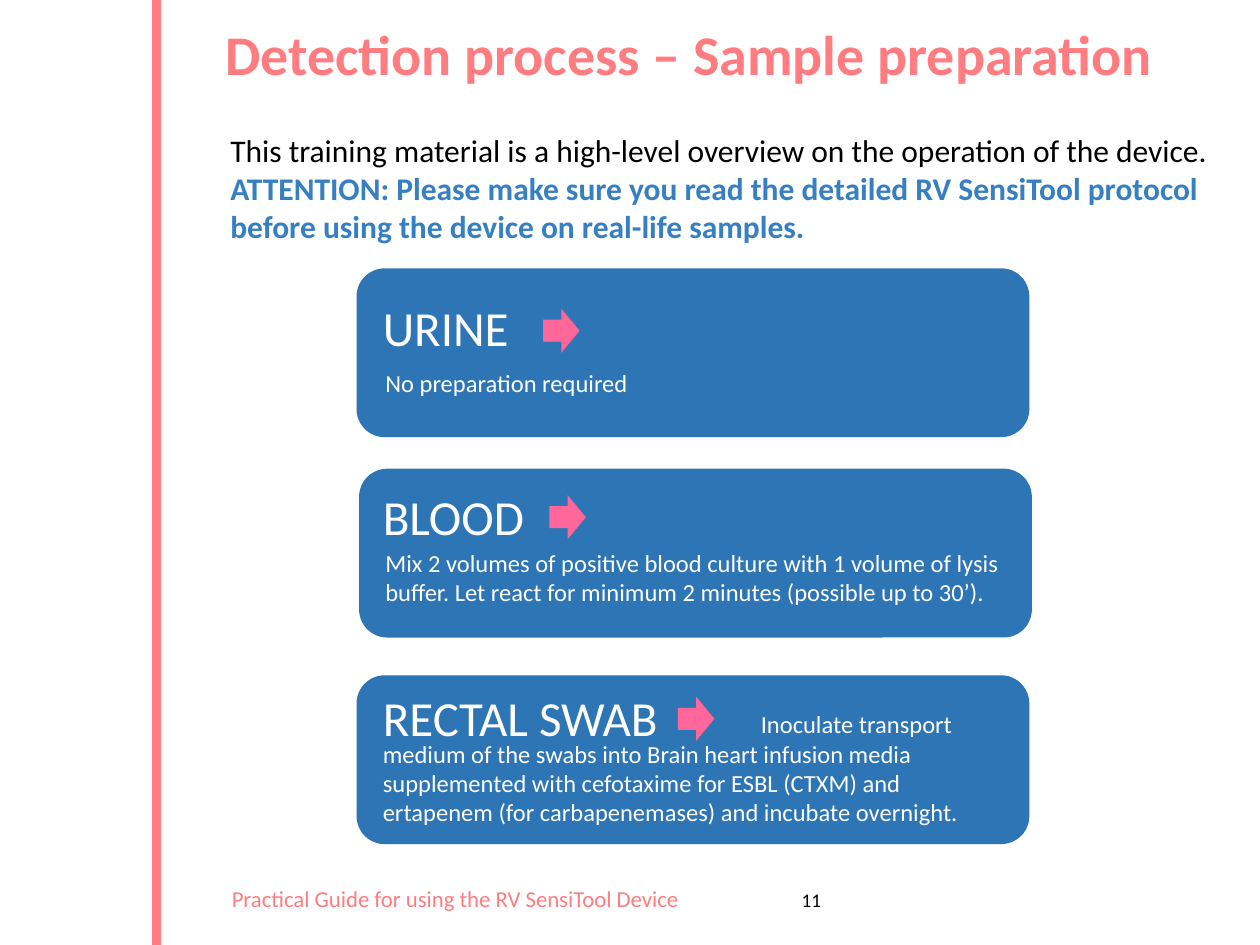
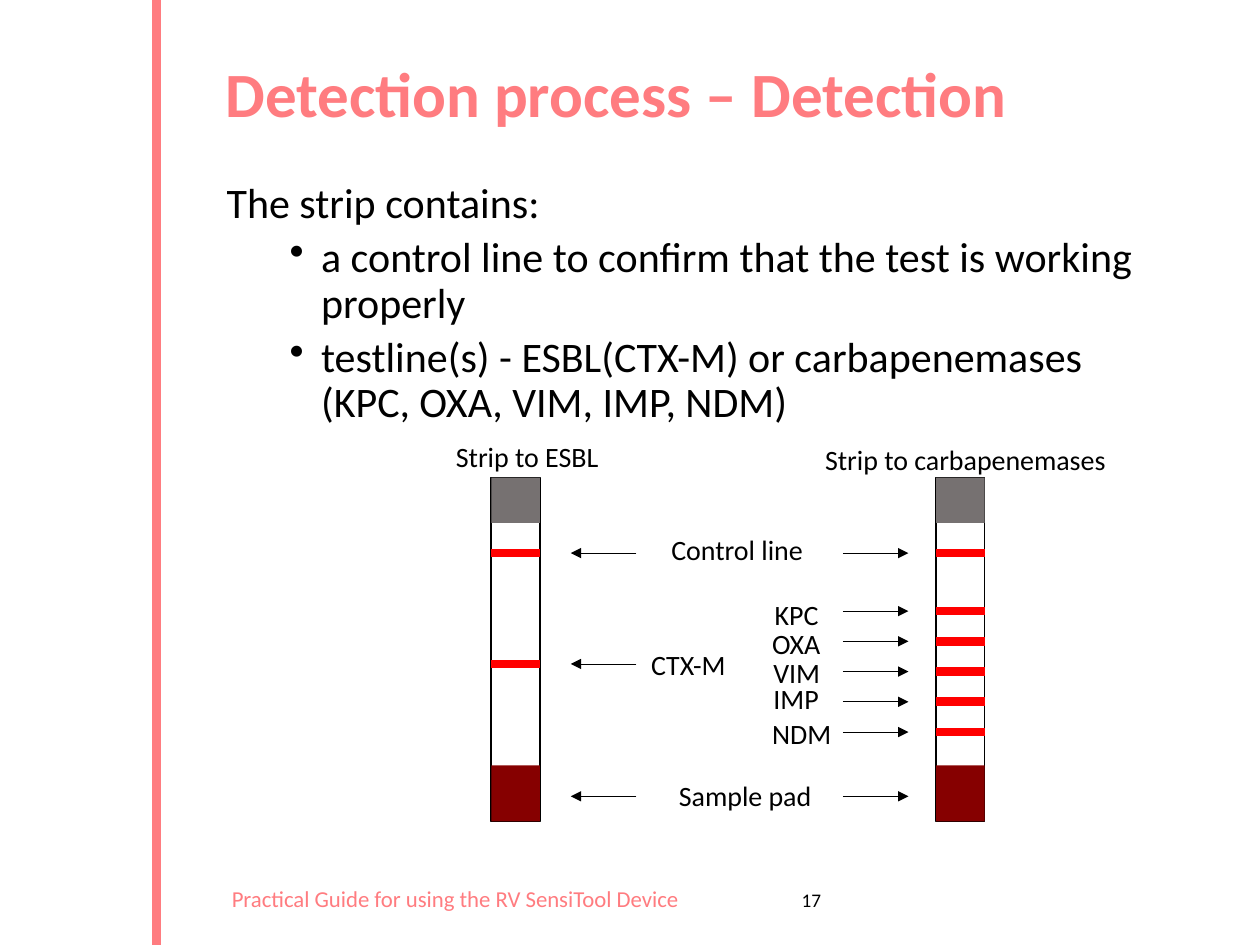
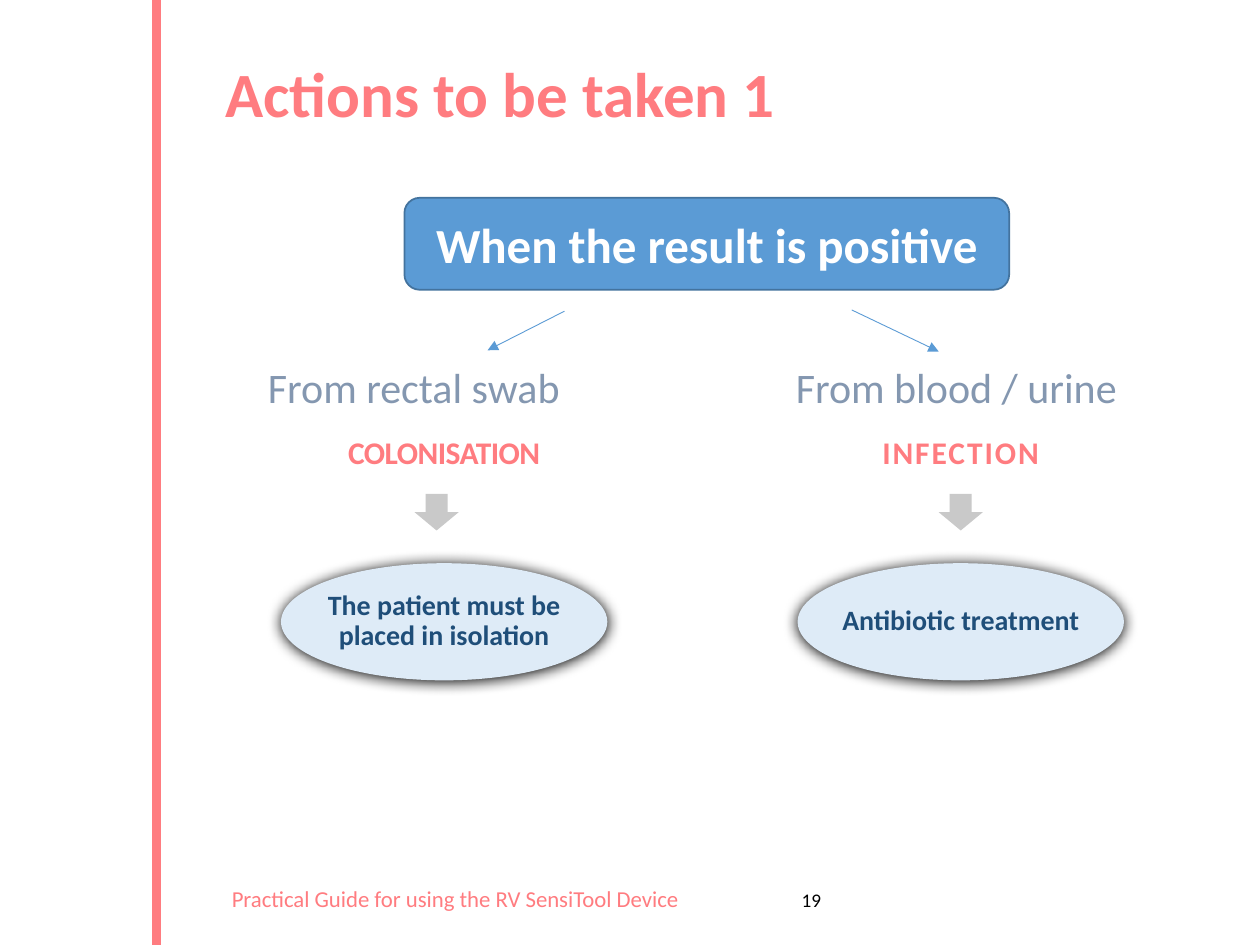
from lxml import etree
from pptx import Presentation
from pptx.dml.color import RGBColor
from pptx.enum.shapes import MSO_CONNECTOR, MSO_SHAPE
from pptx.enum.text import MSO_ANCHOR, PP_ALIGN
from pptx.oxml.ns import qn
from pptx.util import Inches, Pt

ROUNDED, RECT, OVAL = MSO_SHAPE.ROUNDED_RECTANGLE, MSO_SHAPE.RECTANGLE, MSO_SHAPE.OVAL
RIGHT_ARROW, DOWN_ARROW = MSO_SHAPE.RIGHT_ARROW, MSO_SHAPE.DOWN_ARROW
LEFT, CENTER = PP_ALIGN.LEFT, PP_ALIGN.CENTER
TOP, MIDDLE = MSO_ANCHOR.TOP, MSO_ANCHOR.MIDDLE
STRAIGHT = MSO_CONNECTOR.STRAIGHT

# Grid of the slide
COLUMNS, ROWS = 100, 75

# Shared style
FONT = "Calibri"
CORAL, PINK, RED, MAROON = "FF7C80", "FF6699", "FF0000", "860000"
BLACK, WHITE, GREY, SILVER = "000000", "FFFFFF", "767171", "C9C9C9"
CARD_BLUE, NOTE_BLUE, BOX_BLUE, BOX_EDGE = "2E75B6", "357FC2", "5B9BD5", "43739E"
SLATE, PALE_BLUE, NAVY = "8497B0", "DEEBF7", "1F4E79"
FOOTER = "Practical Guide for using the RV SensiTool Device"


def rgb(code):
    return RGBColor.from_string(code)


class SlideWriter:
    """Holds the deck, its style and the slide being filled."""

    def __init__(self):
        self.deck = Presentation()
        self.deck.slide_width, self.deck.slide_height = Inches(10), Inches(7.5)
        self.page = None

    def x(self, columns):
        return round(self.deck.slide_width * columns / COLUMNS)

    def y(self, rows):
        return round(self.deck.slide_height * rows / ROWS)

    def area(self, left, top, width, height):
        return self.x(left), self.y(top), self.x(width), self.y(height)

    def start(self, title, number, top=4.5, size=36):
        """Adds a slide with side band, title, footer and page number."""
        self.page = self.deck.slides.add_slide(self.deck.slide_layouts[6])
        self.line(12.4, ROWS, 12.4, 0, CORAL, 5)
        self.text((16.1, 69.7, 40, 3.2), FOOTER, 13, CORAL, align=CENTER)
        self.text((16.9, top, 81, 8), title, size, CORAL, bold=True, spacing=0.9)
        self.text((62.2, 70, 4.4, 2.9), str(number), 11, align=CENTER)

    def paragraph(self, para, words, size, color=BLACK, bold=False, align=LEFT,
                  spacing=None, before=None, bullet=False, indent=0):
        para.alignment = align
        if spacing:
            para.line_spacing = spacing
        if before:
            para.space_before = Pt(before)
        props = para._p.get_or_add_pPr()
        if bullet:
            props.set("marL", str(Inches(0.75)))
            props.set("indent", str(Inches(-0.25)))
            etree.SubElement(props, qn("a:buChar"), char="•")
        elif indent:
            props.set("indent", str(self.x(indent)))
        font = para.font
        font.name, font.size, font.bold = FONT, Pt(size), bold
        font.color.rgb = rgb(color)
        para.add_run().text = words
        return para

    def text(self, area, words, size, color=BLACK, anchor=TOP, **style):
        box = self.page.shapes.add_textbox(*self.area(*area))
        frame = box.text_frame
        frame.word_wrap = True
        frame.vertical_anchor = anchor
        return self.paragraph(frame.paragraphs[0], words, size, color, **style)

    def shape(self, kind, area, fill, edge=None):
        shape = self.page.shapes.add_shape(kind, *self.area(*area))
        shape.shadow.inherit = False
        shape.fill.solid()
        shape.fill.fore_color.rgb = rgb(fill)
        if edge:
            shape.line.color.rgb = rgb(edge)
            shape.line.width = Pt(1)
        else:
            shape.line.fill.background()
        return shape

    def soft_shadow(self, shape):
        effects = shape._element.spPr.find(qn("a:effectLst"))
        shadow = etree.SubElement(
            effects, qn("a:outerShdw"), blurRad=str(Pt(8.5)), dist=str(Pt(1)),
            dir="5400000", algn="ctr", rotWithShape="0")
        etree.SubElement(shadow, qn("a:srgbClr"), val=BLACK)

    def line(self, x1, y1, x2, y2, color, width, arrow=False):
        line = self.page.shapes.add_connector(
            STRAIGHT, self.x(x1), self.y(y1), self.x(x2), self.y(y2))
        line.line.color.rgb = rgb(color)
        line.line.width = Pt(width)
        props = line._element.spPr
        if arrow:
            etree.SubElement(props.find(qn("a:ln")), qn("a:tailEnd"), type="triangle")
        etree.SubElement(props, qn("a:effectLst"))

    def arrow(self, x1, y1, x2, y2, color=BLACK):
        self.line(x1, y1, x2, y2, color, 0.5, arrow=True)

    def strip(self, left, line_rows):
        """Test strip with grey top, sample pad and red lines."""
        width = 3.85
        self.shape(RECT, (left, 37.9, width, 27.3), WHITE, BLACK)
        self.shape(RECT, (left, 37.9, width, 3.6), GREY)
        self.shape(RECT, (left, 60.75, width, 4.45), MAROON)
        for row in line_rows:
            self.line(left, row, left + width, row, RED, 5)


def sample_preparation(writer):
    writer.start("Detection process – Sample preparation", 11, top=1.7, size=32)
    intro = writer.text(
        (17.3, 9.9, 80.6, 10.1),
        "This training material is a high-level overview on the operation of the device. ", 18)
    warning = intro.add_run()
    warning.text = ("ATTENTION: Please make sure you read the detailed RV SensiTool "
                    "protocol before using the device on real-life samples.")
    warning.font.bold = True
    warning.font.color.rgb = rgb(NOTE_BLUE)

    # One card per sample: card corner, name top, arrow corner, advice area, first indent
    samples = [
        ("URINE", (28.3, 21.3), 23.1, (43.1, 24.5), (29.6, 28.7, 47.8, 3.4), 0,
         "No preparation required"),
        ("BLOOD", (28.5, 37.2), 38.1, (43.6, 39.3), (29.6, 43, 52.1, 5.7), 0,
         "Mix 2 volumes of positive blood culture with 1 volume of lysis buffer. "
         "Let react for minimum 2 minutes (possible up to 30’)."),
        ("RECTAL SWAB", (28.3, 53.6), 54.1, (53.8, 55.3), (29.4, 55.8, 50.6, 10.4), 30,
         "Inoculate transport medium of the swabs into Brain heart infusion media "
         "supplemented with cefotaxime for ESBL (CTXM) and ertapenem "
         "(for carbapenemases) and incubate overnight."),
    ]
    for name, card, name_top, arrow, advice_area, indent, advice in samples:
        writer.shape(ROUNDED, (*card, 53.4, 13.4), CARD_BLUE)
        writer.text((29.4, name_top, 24.9, 5.7), name, 28, WHITE)
        writer.shape(RIGHT_ARROW, (*arrow, 2.9, 3.5), PINK)
        writer.text(advice_area, advice, 14, WHITE, indent=indent)


def detection(writer):
    writer.start("Detection process – Detection", 17)
    first = writer.text((17, 14, 76.2, 22), "The strip contains:", 24, spacing=0.9)
    for words in ("a control line to confirm that the test is working properly",
                  "testline(s) - ESBL(CTX-M) or carbapenemases (KPC, OXA, VIM, IMP, NDM)"):
        # The paragraph's parent gives access to the same text box
        para = writer.page.shapes[-1].text_frame.add_paragraph()
        writer.paragraph(para, words, 24, spacing=0.9, before=5, bullet=True)
    first.space_after = Pt(0)

    # Strips
    control, pad, ctx_m = 43.9, 63.2, 52.7
    enzyme_rows = [48.5 + 2.4 * index for index in range(5)]
    writer.strip(39, [control, ctx_m])
    writer.strip(74.3, [control, *enzyme_rows])

    # Labels
    labels = [
        ("Strip to ESBL", 35.2, 34.4), ("Strip to carbapenemases", 64.5, 34.6),
        ("Control line", 52.3, 41.8), ("Sample pad", 52.9, 61.3), ("CTX-M", 50.7, 50.9),
        ("KPC", 60.5, 46.9), ("OXA", 60.3, 49.2), ("VIM", 60.4, 51.5),
        ("IMP", 60.4, 53.6), ("NDM", 60.3, 56.4),
    ]
    for words, left, top in labels:
        writer.text((left, top, 5 + 1.1 * len(words), 3.7), words, 16)

    # Arrows to the strips
    for row in (control, ctx_m, pad):
        writer.arrow(50.5, row, 45.3, row)
    for row in (control, *enzyme_rows, pad):
        writer.arrow(66.9, row, 72.1, row)


def actions(writer):
    writer.start("Actions to be taken 1", 19)
    writer.shape(ROUNDED, (32.1, 15.7, 48, 7.3), BOX_BLUE, BOX_EDGE)
    writer.text((32.1, 16.5, 48, 5.7), "When the result is positive", 28, WHITE,
                bold=True, align=CENTER)
    writer.arrow(44.8, 24.7, 38.7, 27.8, BOX_BLUE)
    writer.arrow(67.6, 24.6, 74.5, 27.9, BOX_BLUE)

    # One branch per source: source and arrow centres, oval centre, letter spacing
    branches = [
        ("From rectal swab", 32.85, "COLONISATION", -30, 34.65,
         "The patient must be placed in isolation", 35.25),
        ("From blood / urine", 75.9, "INFECTION", 110, 76.25,
         "Antibiotic treatment", 76.25),
    ]
    centred = {"anchor": MIDDLE, "align": CENTER, "spacing": 0.9}
    for source, source_mid, finding, tracking, arrow_mid, action, oval_mid in branches:
        writer.text((source_mid - 16, 28.9, 32, 4.1), source, 24, SLATE, **centred)
        para = writer.text((oval_mid - 10, 34.5, 20, 3.1), finding, 18, CORAL,
                           bold=True, **centred)
        para.runs[0]._r.get_or_add_rPr().set("spc", str(tracking))
        writer.shape(DOWN_ARROW, (arrow_mid - 1.75, 39.2, 3.5, 2.9), SILVER)
        oval = writer.shape(OVAL, (oval_mid - 12.95, 44.7, 25.9, 9.3), PALE_BLUE)
        writer.soft_shadow(oval)
        writer.text((oval_mid - 11.25, 44.7, 22.5, 9.3), action, 16, NAVY,
                    bold=True, **centred)


def main():
    writer = SlideWriter()
    sample_preparation(writer)
    detection(writer)
    actions(writer)
    writer.deck.save("out.pptx")


if __name__ == "__main__":
    main()
